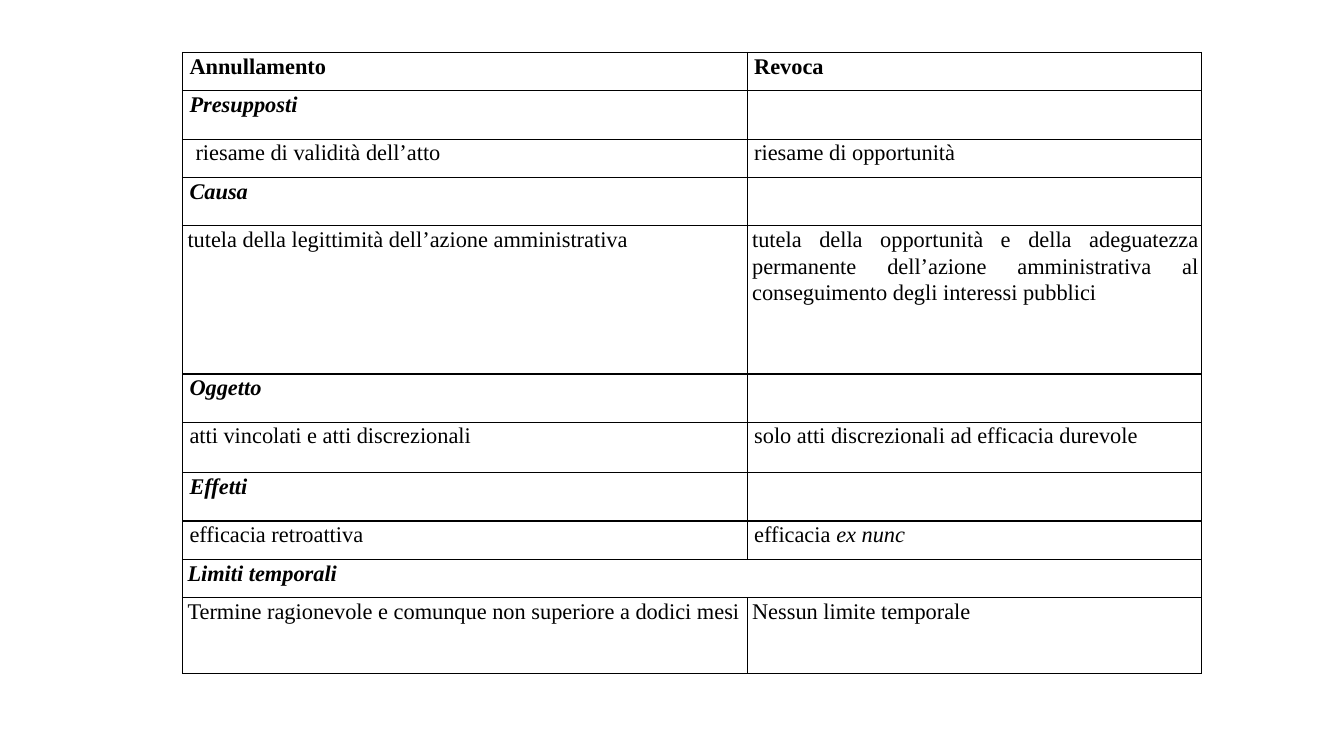
from dataclasses import dataclass

from lxml.etree import SubElement
from pptx import Presentation
from pptx.dml.color import RGBColor
from pptx.enum.text import PP_ALIGN as Align
from pptx.oxml.ns import qn
from pptx.util import Inches, Pt


@dataclass(frozen=True)
class Theme:
    font: str = "Times New Roman"
    size: int = 16
    ink: str = "000000"
    paper: str = "FFFFFF"
    border: float = 1
    line_spacing: float = 1.07
    space_after: float = 8
    indent: float = 0.02


PLAIN = {}
BOLD = {"bold": True}
HEADING = {"bold": True, "italic": True}
WIDE, NARROW = 0.05, 0.03  # side margins of the cells

COLUMN_WIDTHS = (5.6, 4.51)
# height, side margin, text format, cell texts; one text alone spans the row
ROWS = [
    (0.38, WIDE, BOLD, ["Annullamento", "Revoca"]),
    (0.48, WIDE, HEADING, ["Presupposti", ""]),
    (0.38, WIDE, PLAIN, ["riesame di validità dell’atto", "riesame di opportunità"]),
    (0.48, WIDE, HEADING, ["Causa", ""]),
    (1.47, NARROW, PLAIN, [
        "tutela della legittimità dell’azione amministrativa",
        "tutela della opportunità e della adeguatezza permanente "
        "dell’azione amministrativa al conseguimento degli interessi pubblici"]),
    (0.48, WIDE, HEADING, ["Oggetto", ""]),
    (0.5, WIDE, PLAIN, ["atti vincolati e atti discrezionali",
                        "solo atti discrezionali ad efficacia durevole"]),
    (0.48, WIDE, HEADING, ["Effetti", ""]),
    (0.38, WIDE, PLAIN, ["efficacia retroattiva", "efficacia "]),
    (0.38, NARROW, HEADING, ["Limiti temporali"]),
    (0.75, NARROW, PLAIN, ["Termine ragionevole e comunque non superiore a dodici mesi",
                           "Nessun limite temporale"]),
]
VALIDITY_CELL, EX_NUNC_CELL = (2, 0), (8, 1)


class SlideBuilder:
    def __init__(self, page, theme):
        self.page = page
        self.theme = theme

    def add_text(self, para, text, bold=False, italic=False):
        span = para.add_run()
        span.text = text
        font = span.font
        font.name, font.size = self.theme.font, Pt(self.theme.size)
        font.bold, font.italic = bold, italic
        font.color.rgb = RGBColor.from_string(self.theme.ink)

    def format_paragraph(self, para, indent):
        para.alignment = Align.JUSTIFY
        para.line_spacing = self.theme.line_spacing
        para.space_after = Pt(self.theme.space_after)
        para.font.size = Pt(self.theme.size)
        properties = para._p.get_or_add_pPr()
        properties.set("marL", str(Inches(indent)))
        properties.set("indent", "0")

    def draw_borders(self, cell):
        properties = cell._tc.get_or_add_tcPr()
        for side in ("lnL", "lnR", "lnT", "lnB"):
            line = SubElement(properties, qn(f"a:{side}"), w=str(Pt(self.theme.border)))
            fill = SubElement(line, qn("a:solidFill"))
            SubElement(fill, qn("a:srgbClr"), val=self.theme.ink)

    def format_cell(self, cell, margin):
        cell.margin_left = cell.margin_right = Inches(margin)
        cell.margin_top = cell.margin_bottom = 0
        self.draw_borders(cell)
        cell.fill.solid()
        cell.fill.fore_color.rgb = RGBColor.from_string(self.theme.paper)

    def add_table(self, left, top, widths, rows):
        heights = [row[0] for row in rows]
        table = self.page.shapes.add_table(
            len(rows), len(widths), Inches(left), Inches(top),
            Inches(sum(widths)), Inches(sum(heights))).table
        table.first_row = table.horz_banding = False
        for column, width in zip(table.columns, widths):
            column.width = Inches(width)
        for r, (height, margin, style, texts) in enumerate(rows):
            table.rows[r].height = Inches(height)
            for c in range(len(widths)):
                self.format_cell(table.cell(r, c), margin)
            if len(texts) < len(widths):
                table.cell(r, 0).merge(table.cell(r, len(widths) - 1))
            for c, text in enumerate(texts):
                para = table.cell(r, c).text_frame.paragraphs[0]
                self.format_paragraph(para, self.theme.indent)
                if text:
                    self.add_text(para, text, **style)
        return table


def main():
    deck = Presentation()
    deck.slide_width, deck.slide_height = Inches(13.33), Inches(7.5)
    page = deck.slides.add_slide(deck.slide_layouts[6])
    builder = SlideBuilder(page, Theme())
    table = builder.add_table(1.81, 0.52, COLUMN_WIDTHS, ROWS)
    builder.format_paragraph(table.cell(*VALIDITY_CELL).text_frame.paragraphs[0], 0.08)
    builder.add_text(table.cell(*EX_NUNC_CELL).text_frame.paragraphs[0],
                     "ex nunc", italic=True)
    deck.save("out.pptx")


if __name__ == "__main__":
    main()
